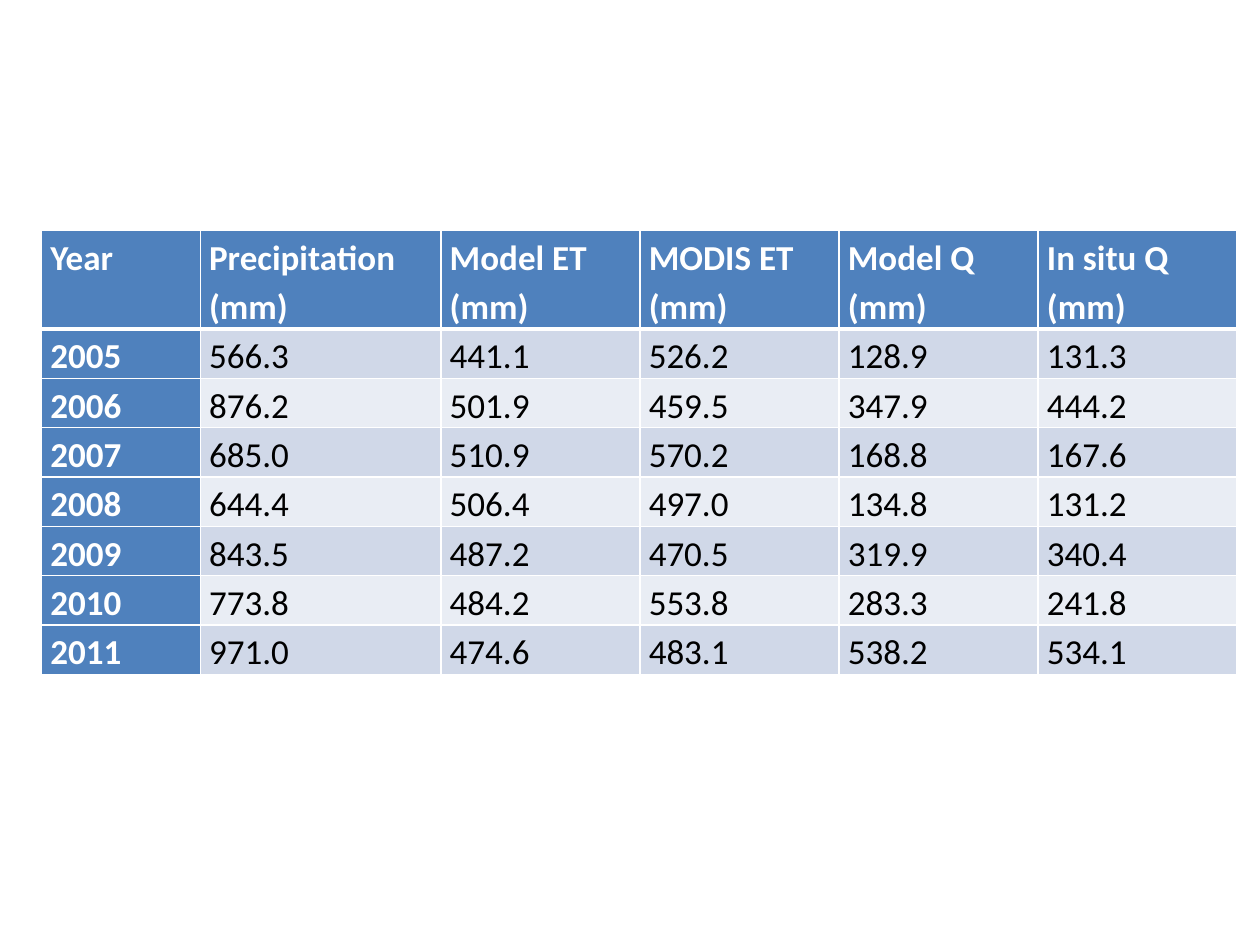
from lxml.etree import SubElement
from pptx import Presentation
from pptx.dml.color import RGBColor
from pptx.oxml.ns import qn
from pptx.util import Inches, Pt

WHITE, BLACK, BLUE = "FFFFFF", "000000", "4F81BD"
BANDS = ["D0D8E8", "E9EDF4"]
COLUMN_WIDTHS = [1.26, 1.91] + [1.58] * 4
HEADER_HEIGHT, ROW_HEIGHT = 0.72, 0.36
MARGINS = {"margin_left": Inches(0.07), "margin_right": Inches(0.07),
           "margin_top": 0, "margin_bottom": 0}
FONT = {"name": "Calibri", "size": Pt(20)}
HEADERS = ["Year", "Precipitation (mm)", "Model ET\n(mm)", "MODIS ET\n(mm)",
           "Model Q\n(mm)", "In situ Q\n(mm)"]
WATER_BALANCE = [
    ["2005", "566.3", "441.1", "526.2", "128.9", "131.3"],
    ["2006", "876.2", "501.9", "459.5", "347.9", "444.2"],
    ["2007", "685.0", "510.9", "570.2", "168.8", "167.6"],
    ["2008", "644.4", "506.4", "497.0", "134.8", "131.2"],
    ["2009", "843.5", "487.2", "470.5", "319.9", "340.4"],
    ["2010", "773.8", "484.2", "553.8", "283.3", "241.8"],
    ["2011", "971.0", "474.6", "483.1", "538.2", "534.1"],
]


def color(hex_code):
    """Turn a hex string into a colour."""
    return RGBColor.from_string(hex_code)


def set_attributes(target, values):
    """Set each named value on the target."""
    for name, value in values.items():
        setattr(target, name, value)


def add_borders(cell, widths):
    """Draw white cell borders with a width in points for each side."""
    properties = cell._tc.get_or_add_tcPr()
    for side, width in widths.items():
        line = SubElement(properties, qn(f"a:ln{side}"), w=str(Pt(width)))
        fill = SubElement(line, qn("a:solidFill"))
        SubElement(fill, qn("a:srgbClr"), val=WHITE)


def fill_cell(cell, text, row, column):
    """Write and style one cell according to its place in the table."""
    heading = row == 0 or column == 0
    add_borders(cell, {"L": 1, "R": 1, "T": 3 if row == 1 else 1,
                       "B": 3 if row == 0 else 1})
    cell.fill.solid()
    cell.fill.fore_color.rgb = color(BLUE if heading else BANDS[(row - 1) % 2])
    set_attributes(cell, MARGINS)
    cell.text = text
    for para in cell.text_frame.paragraphs:
        para.line_spacing = 1.15
        for span in para.runs:
            set_attributes(span.font, {**FONT, "bold": heading})
            span.font.color.rgb = color(WHITE if heading else BLACK)


def add_data_table(page, rows, left, top):
    """Add the table with a header row and a column of years."""
    heights = [HEADER_HEIGHT] + [ROW_HEIGHT] * (len(rows) - 1)
    frame = page.shapes.add_table(
        len(rows), len(COLUMN_WIDTHS), Inches(left), Inches(top),
        Inches(sum(COLUMN_WIDTHS)), Inches(sum(heights)))
    table = frame.table
    table.first_col = True
    for column, width in zip(table.columns, COLUMN_WIDTHS):
        column.width = Inches(width)
    for row, height in zip(table.rows, heights):
        row.height = Inches(height)
    for row, texts in enumerate(rows):
        for column, text in enumerate(texts):
            fill_cell(table.cell(row, column), text, row, column)


def main():
    """Build the slide and save the deck."""
    deck = Presentation()
    set_attributes(deck, {"slide_width": Inches(10), "slide_height": Inches(7.5)})
    page = deck.slides.add_slide(deck.slide_layouts[6])
    add_data_table(page, [HEADERS] + WATER_BALANCE, 0.33, 1.83)
    deck.save("out.pptx")


if __name__ == "__main__":
    main()
